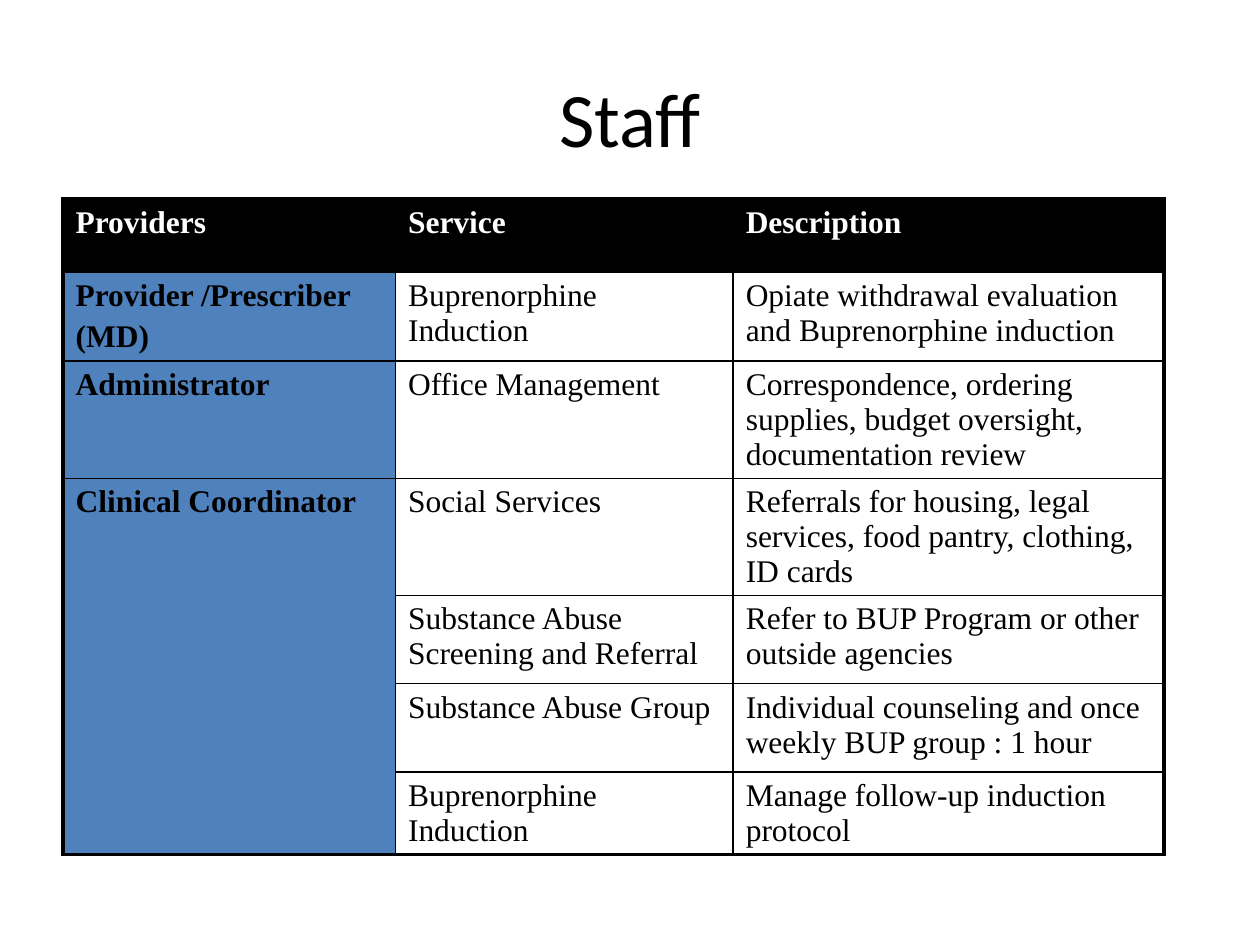
from pptx import Presentation
from pptx.dml.color import RGBColor
from pptx.enum.text import MSO_ANCHOR, PP_ALIGN
from pptx.oxml import parse_xml
from pptx.oxml.ns import nsdecls
from pptx.util import Pt

BLACK = RGBColor(0x00, 0x00, 0x00)
WHITE = RGBColor(0xFF, 0xFF, 0xFF)
BLUE = RGBColor(0x4F, 0x81, 0xBD)

THIN, THICK = 1, 2.25
COLUMN_WIDTHS = [190, 193, 246.2]
ROW_HEIGHTS = [41.8, 50.4, 47.5, 51.8, 50.4, 50.4, 36]
COORDINATOR_ROW = 3  # its provider cell spans all the rows below

STAFF = [
    ["Providers", "Service", "Description"],
    ["Provider /Prescriber\n(MD)", "Buprenorphine Induction",
     "Opiate withdrawal evaluation and Buprenorphine induction"],
    ["Administrator", "Office Management",
     "Correspondence, ordering supplies, budget oversight, documentation review"],
    ["Clinical Coordinator", "Social Services",
     "Referrals for housing, legal services, food pantry, clothing, ID cards"],
    ["", "Substance Abuse Screening and Referral",
     "Refer to BUP Program or other outside agencies"],
    ["", "Substance Abuse Group",
     "Individual counseling and once weekly BUP group : 1 hour"],
    ["", "Buprenorphine Induction", "Manage follow-up induction protocol"],
]


def set_borders(cell, widths):
    """Draw black edges; widths are points for left, right, top, bottom."""
    properties = cell._tc.get_or_add_tcPr()
    for side, width in zip("LRTB", widths):
        properties.append(parse_xml(
            f'<a:ln{side} {nsdecls("a")} w="{Pt(width)}"><a:solidFill>'
            f'<a:srgbClr val="{BLACK}"/></a:solidFill></a:ln{side}>'))


def format_cell(cell, text, fill, color, bold):
    if fill is None:
        cell.fill.background()
    else:
        cell.fill.solid()
        cell.fill.fore_color.rgb = fill
    cell.margin_left = cell.margin_right = Pt(7.2)
    cell.margin_top = cell.margin_bottom = Pt(3.6)
    cell.text = text
    for index, para in enumerate(cell.text_frame.paragraphs):
        if index:
            para.space_before = Pt(3.6)
        para.font.name = "Times New Roman"
        para.font.size = Pt(18)
        para.font.bold = bold
        para.font.color.rgb = color


def add_title(page, left, top, width, height):
    title = page.shapes.title
    title.left, title.top = Pt(left), Pt(top)
    title.width, title.height = Pt(width), Pt(height)
    title.text = "Staff"
    title.text_frame.vertical_anchor = MSO_ANCHOR.MIDDLE
    para = title.text_frame.paragraphs[0]
    para.alignment = PP_ALIGN.CENTER
    para.font.name = "Calibri"
    para.font.size = Pt(44)
    para.font.color.rgb = BLACK


def add_staff_table(page, left, top):
    last_row, last_column = len(STAFF) - 1, len(COLUMN_WIDTHS) - 1
    table = page.shapes.add_table(
        len(STAFF), len(COLUMN_WIDTHS), Pt(left), Pt(top),
        Pt(sum(COLUMN_WIDTHS)), Pt(sum(ROW_HEIGHTS))).table
    table.horz_banding = False
    for column, width in zip(table.columns, COLUMN_WIDTHS):
        column.width = Pt(width)
    for row, height in zip(table.rows, ROW_HEIGHTS):
        row.height = Pt(height)
    table.cell(COORDINATOR_ROW, 0).merge(table.cell(last_row, 0))

    for r, texts in enumerate(STAFF):
        for c, text in enumerate(texts):
            cell = table.cell(r, c)
            end_row = r + cell.span_height - 1 if cell.is_merge_origin else r
            # The outer frame is thick, the inner grid thin
            outer = (c == 0, c == last_column, r == 0, end_row == last_row)
            set_borders(cell, [THICK if edge else THIN for edge in outer])
            if r == 0:
                format_cell(cell, text, BLACK, WHITE, True)
            elif c == 0:
                format_cell(cell, text, BLUE, BLACK, True)
            else:
                format_cell(cell, text, None, BLACK, False)


def main():
    deck = Presentation()
    deck.slide_width, deck.slide_height = Pt(720), Pt(540)
    page = deck.slides.add_slide(deck.slide_layouts[5])  # title only
    add_title(page, 36, 21.6, 648, 90)
    add_staff_table(page, 36, 113.8)
    deck.save("out.pptx")


if __name__ == "__main__":
    main()
